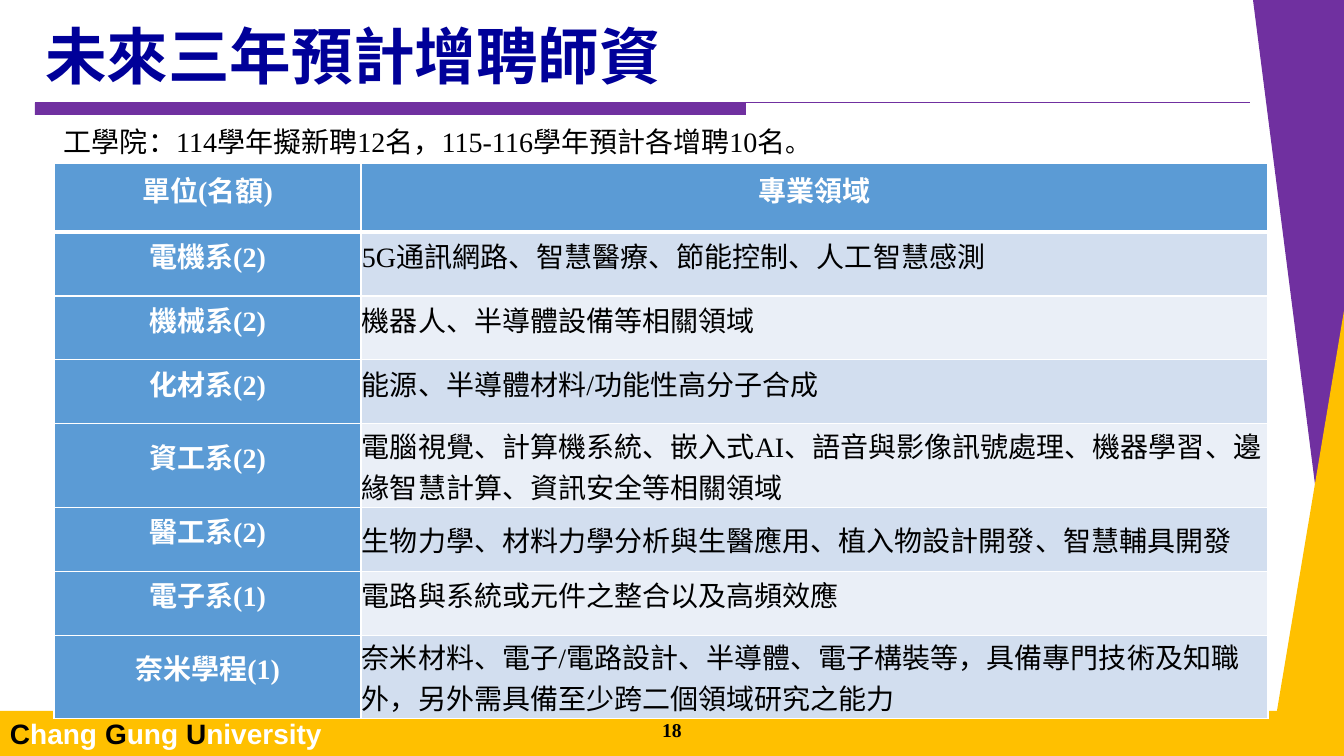
import pptx
import pptx.dml.color
import pptx.enum.shapes
import pptx.enum.text
import pptx.oxml
import pptx.oxml.ns
import pptx.util

PX_PER_INCH = 100.8
COLORS = {
    "white": "FFFFFF", "black": "000000", "navy": "000099", "purple": "7030A0",
    "gold": "FFC000", "blue": "5B9BD5", "band_dark": "D2DEEF", "band_light": "EAEFF7",
}
SERIF = "Times New Roman"
ALIGN = pptx.enum.text.PP_ALIGN
MIDDLE = pptx.enum.text.MSO_ANCHOR.MIDDLE
HEADER = ("單位(名額)", "專業領域")
UNITS = [
    ("電機系(2)", "5G通訊網路、智慧醫療、節能控制、人工智慧感測"),
    ("機械系(2)", "機器人、半導體設備等相關領域"),
    ("化材系(2)", "能源、半導體材料/功能性高分子合成"),
    ("資工系(2)", "電腦視覺、計算機系統、嵌入式AI、語音與影像訊號處理、機器學習、邊緣智慧計算、資訊安全等相關領域"),
    ("醫工系(2)", "生物力學、材料力學分析與生醫應用、植入物設計開發、智慧輔具開發"),
    ("電子系(1)", "電路與系統或元件之整合以及高頻效應"),
    ("奈米學程(1)", "奈米材料、電子/電路設計、半導體、電子構裝等，具備專門技術及知職外，另外需具備至少跨二個領域研究之能力"),
]
COL_WIDTHS = (307, 907)
ROW_HEIGHTS = (69, 64, 64, 64, 82, 64, 64, 82)
NATURAL_SPACING = (4, 5, 7)  # rows whose description keeps single line spacing


def px(n):
    return round(n * 914400 / PX_PER_INCH)


def rgb(name):
    return pptx.dml.color.RGBColor.from_string(COLORS[name])


def style_run(r, size, font, color, bold=False):
    r.font.size = pptx.util.Pt(size)
    r.font.name = font
    r.font.bold = bold
    r.font.color.rgb = rgb(color)


def paint(sp, color):
    sp.shadow.inherit = False
    sp.fill.solid()
    sp.fill.fore_color.rgb = rgb(color)
    sp.line.fill.background()


def add_rect(s, box, color):
    sp = s.shapes.add_shape(pptx.enum.shapes.MSO_SHAPE.RECTANGLE, *map(px, box))
    paint(sp, color)
    return sp


def add_polygon(s, points, color):
    start, *rest = [(px(x), px(y)) for x, y in points]
    builder = s.shapes.build_freeform(*start)
    builder.add_line_segments(rest, close=True)
    paint(builder.convert_to_shape(), color)


def add_rule(s, x1, x2, y, color):
    line = s.shapes.add_connector(
        pptx.enum.shapes.MSO_CONNECTOR.STRAIGHT, px(x1), px(y), px(x2), px(y))
    line.line.color.rgb = rgb(color)
    line.line.width = pptx.util.Pt(0.75)
    line._element.spPr.append(pptx.oxml.parse_xml(
        f'<a:effectLst {pptx.oxml.ns.nsdecls("a")}/>'))


def add_text(s, box, runs, align):
    """Add one paragraph; each run is (text, size, font, color, bold)."""
    tf = s.shapes.add_textbox(*map(px, box)).text_frame
    tf.word_wrap = True
    p = tf.paragraphs[0]
    p.alignment = align
    for text, *style in runs:
        r = p.add_run()
        r.text = text
        style_run(r, *style)
    return tf


def add_footer(s):
    tf = add_rect(s, (0, 711, 1344, 45), "gold").text_frame
    tf.vertical_anchor = MIDDLE
    p = tf.paragraphs[0]
    p.alignment = ALIGN.LEFT
    for word in ("Chang ", "Gung ", "University"):
        for text, color in ((word[0], "black"), (word[1:], "white")):
            r = p.add_run()
            r.text = text
            style_run(r, 20, "Arial", color, True)


def set_title(s, text):
    title = s.shapes.title
    title.left, title.top, title.width, title.height = map(px, (35, 20, 1215, 79))
    tf = title.text_frame
    tf.text = text
    tf.auto_size = pptx.enum.text.MSO_AUTO_SIZE.NONE
    tf.vertical_anchor = MIDDLE
    p = tf.paragraphs[0]
    p.alignment = ALIGN.LEFT
    p.line_spacing = 0.9
    style_run(p.runs[0], 44, "Calibri", "navy", True)


def set_borders(cell, **widths):
    """Draw white borders; widths are points by side: L, R, T, B."""
    for side, width in widths.items():
        cell._tc.get_or_add_tcPr().append(pptx.oxml.parse_xml(
            f'<a:ln{side} {pptx.oxml.ns.nsdecls("a")} w="{pptx.util.Pt(width)}">'
            f'<a:solidFill><a:srgbClr val="{COLORS["white"]}"/></a:solidFill></a:ln{side}>'))


def fill_cell(cell, text, row, col):
    is_label = row == 0 or col == 0
    set_borders(cell, L=1, R=1, T=3 if row == 1 else 1, B=3 if row == 0 else 1)
    cell.fill.solid()
    band = "band_dark" if row % 2 else "band_light"
    cell.fill.fore_color.rgb = rgb("blue" if is_label else band)
    cell.margin_left = cell.margin_right = px(1)
    cell.margin_top = cell.margin_bottom = px(1)
    cell.vertical_anchor = MIDDLE
    cell.text_frame.text = text
    p = cell.text_frame.paragraphs[0]
    p.alignment = ALIGN.CENTER if is_label else ALIGN.LEFT
    if is_label or row not in NATURAL_SPACING:
        p.line_spacing = pptx.util.Pt(16 if row else 17)
    style_run(p.runs[0], 20, SERIF, "white" if is_label else "black", is_label)


def add_unit_table(s):
    rows = [HEADER, *UNITS]
    box = (54, 163, sum(COL_WIDTHS), sum(ROW_HEIGHTS))
    table = s.shapes.add_table(len(rows), len(HEADER), *map(px, box)).table
    for column, width in zip(table.columns, COL_WIDTHS):
        column.width = px(width)
    for row, height in zip(table.rows, ROW_HEIGHTS):
        row.height = px(height)
    for i, texts in enumerate(rows):
        for j, text in enumerate(texts):
            fill_cell(table.cell(i, j), text, i, j)


def main():
    prs = pptx.Presentation()
    prs.slide_width, prs.slide_height = px(1344), px(756)
    s = prs.slides.add_slide(prs.slide_layouts[5])
    add_footer(s)
    add_polygon(s, [(1344, 711), (1253, 0), (1344, 0)], "purple")
    add_polygon(s, [(1344, 311), (1277, 711), (1344, 711)], "gold")
    add_rect(s, (35, 103, 711, 12), "purple")
    add_rule(s, 35, 1250, 103, "purple")
    set_title(s, "未來三年預計增聘師資")
    add_unit_table(s)
    add_text(s, (533, 713, 278, 28), [("18", 14, SERIF, "black", True)], ALIGN.CENTER)
    intro = add_text(s, (54, 125, 874, 38), [
        ("工學院：114學年擬新聘12名，115-116學年預計各增聘10名", 20, SERIF, "black", False),
        ("。", 18, "Calibri", "black", False),
    ], ALIGN.JUSTIFY)
    intro.paragraphs[0].line_spacing = pptx.util.Pt(20)
    prs.save("out.pptx")


if __name__ == "__main__":
    main()
